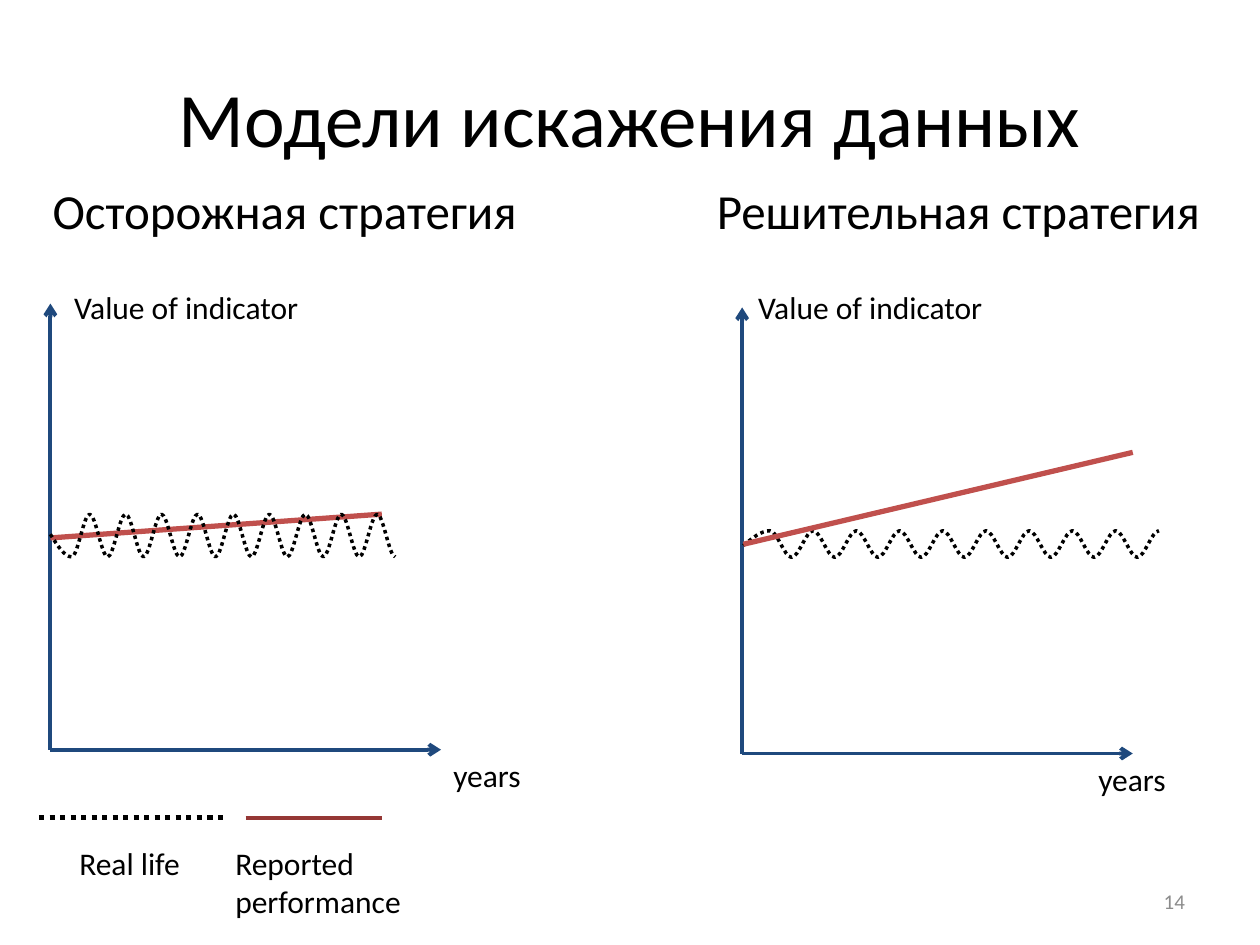
from pptx import Presentation
from pptx.dml.color import RGBColor
from pptx.enum.dml import MSO_LINE
from pptx.enum.shapes import MSO_CONNECTOR
from pptx.enum.text import MSO_ANCHOR, MSO_AUTO_SIZE, PP_ALIGN
from pptx.oxml.ns import qn
from pptx.util import Pt
from lxml import etree

DOTS = MSO_LINE.ROUND_DOT
STRAIGHT = MSO_CONNECTOR.STRAIGHT
MIDDLE = MSO_ANCHOR.MIDDLE
LEFT, CENTER, RIGHT = PP_ALIGN.LEFT, PP_ALIGN.CENTER, PP_ALIGN.RIGHT

THEME = {
    "font": "Calibri",
    "ink": "000000", "grey": "8C8C8C", "axis": "1F497D",
    "trend": "C0504D", "key": "953735",
    "title": 44, "head": 28, "body": 18, "small": 12,
}

# Boxes are (left, top, width, height); lines are (x1, y1, x2, y2).
TITLE = ("Модели искажения данных", (36, 21.6, 648, 90))
NUMBER = ("14", (516.2, 500.4, 168, 28.8))
CHARTS = [
    {
        "head": ("Осторожная стратегия", (23, 99.4, 283, 41)),
        "origin": (28.8, 428.4),
        "value": (35.3, 161.3), "years": (252, 428.4),
        "trend": (28.8, 307.4, 218.2, 293.8),
        "wave": {"start": (28.8, 305.3), "first": 41, "step": 10.27,
                 "turns": (318.2, 293.8)},
        "wave_on_top": True,
    },
    {
        "head": ("Решительная стратегия", (402.5, 99.4, 293.8, 41)),
        "origin": (424.1, 430.6),
        "value": (426.2, 161.3), "years": (620.6, 430.6),
        "trend": (424.8, 311, 647.3, 258.5),
        "wave": {"start": (424.8, 311.8), "first": 440, "step": 12.35,
                 "turns": (303.3, 318.5)},
        "wave_on_top": False,
    },
]
AXIS_W, AXIS_H = 223.2, 254.9
TURNS = 19
KEYS = [
    (["Real life"], (38.2, 478.8, 72.7, 28.8),
     (22.3, 467.3, 127.4, 467.3), "ink", 3, True),
    (["Reported", "performance"], (127.4, 478.8, 110.2, 50.4),
     (140.4, 467.3, 218.2, 467.3), "key", 2, False),
]


def color(name):
    return RGBColor.from_string(THEME[name])


def add_text(slide, lines, box, size="body", ink="ink", align=LEFT, fit=True):
    """Fit makes a label that hugs its words; otherwise wrap, centred vertically."""
    frame = slide.shapes.add_textbox(*map(Pt, box)).text_frame
    frame.word_wrap = not fit
    if fit:
        frame.auto_size = MSO_AUTO_SIZE.SHAPE_TO_FIT_TEXT
    else:
        frame.vertical_anchor = MIDDLE
    for i, line in enumerate(lines):
        para = frame.add_paragraph() if i else frame.paragraphs[0]
        para.alignment = align
        run = para.add_run()
        run.text = line
        run.font.name = THEME["font"]
        run.font.size = Pt(THEME[size])
        run.font.color.rgb = color(ink)


def style_line(line, ink, width, dots=False):
    line.color.rgb = color(ink)
    line.width = Pt(width)
    if dots:
        line.dash_style = DOTS


def add_line(slide, ends, ink, width, dots=False, arrow=False):
    link = slide.shapes.add_connector(STRAIGHT, *map(Pt, ends))
    style_line(link.line, ink, width, dots)
    props = link._element.spPr
    if arrow:
        etree.SubElement(props.find(qn("a:ln")), qn("a:tailEnd"), type="arrow")
    etree.SubElement(props, qn("a:effectLst"))


def bend(shape):
    """Turn each straight segment into a curve that is level at its turning points."""
    points = list(shape._element.iter(qn("a:pt")))
    knots = [(int(p.get("x")), int(p.get("y"))) for p in points]
    for i, point in enumerate(points[1:]):
        (x1, y1), (x2, y2) = knots[i:i + 2]
        third = (x2 - x1) // 3
        lead = y1 if i else (y1 + y2) // 2
        curve = point.getparent()
        curve.tag = qn("a:cubicBezTo")
        for n, (x, y) in enumerate([(x1 + third, lead), (x2 - third, y2)]):
            handle = etree.Element(qn("a:pt"), x=str(x), y=str(y))
            curve.insert(n, handle)


def add_wave(slide, start, first, step, turns):
    knots = [(first + i * step, turns[i % 2]) for i in range(TURNS)]
    outline = slide.shapes.build_freeform(*map(Pt, start))
    outline.add_line_segments([(Pt(x), Pt(y)) for x, y in knots], close=False)
    wave = outline.convert_to_shape()
    bend(wave)
    wave.shadow.inherit = False
    wave.fill.background()
    style_line(wave.line, "ink", 2, dots=True)


def add_chart(slide, chart):
    head, box = chart["head"]
    add_text(slide, [head], box, "head")
    x, y = chart["origin"]
    for end in ((x + AXIS_W, y), (x, y - AXIS_H)):
        add_line(slide, (x, y, *end), "axis", 2.25, arrow=True)
    add_text(slide, ["Value of indicator"], (*chart["value"], 144, 28.8))
    add_text(slide, ["years"], (*chart["years"], 53.3, 28.8))
    if not chart["wave_on_top"]:
        add_wave(slide, **chart["wave"])
    add_line(slide, chart["trend"], "trend", 3)
    if chart["wave_on_top"]:
        add_wave(slide, **chart["wave"])


def main():
    deck = Presentation()
    deck.slide_width, deck.slide_height = Pt(720), Pt(540)
    slide = deck.slides.add_slide(deck.slide_layouts[6])
    title, box = TITLE
    add_text(slide, [title], box, "title", align=CENTER, fit=False)
    number, box = NUMBER
    add_text(slide, [number], box, "small", "grey", RIGHT, fit=False)
    for chart in CHARTS:
        add_chart(slide, chart)
    for lines, box, ends, ink, width, dots in KEYS:
        add_line(slide, ends, ink, width, dots)
        add_text(slide, lines, box)
    deck.save("out.pptx")


if __name__ == "__main__":
    main()
